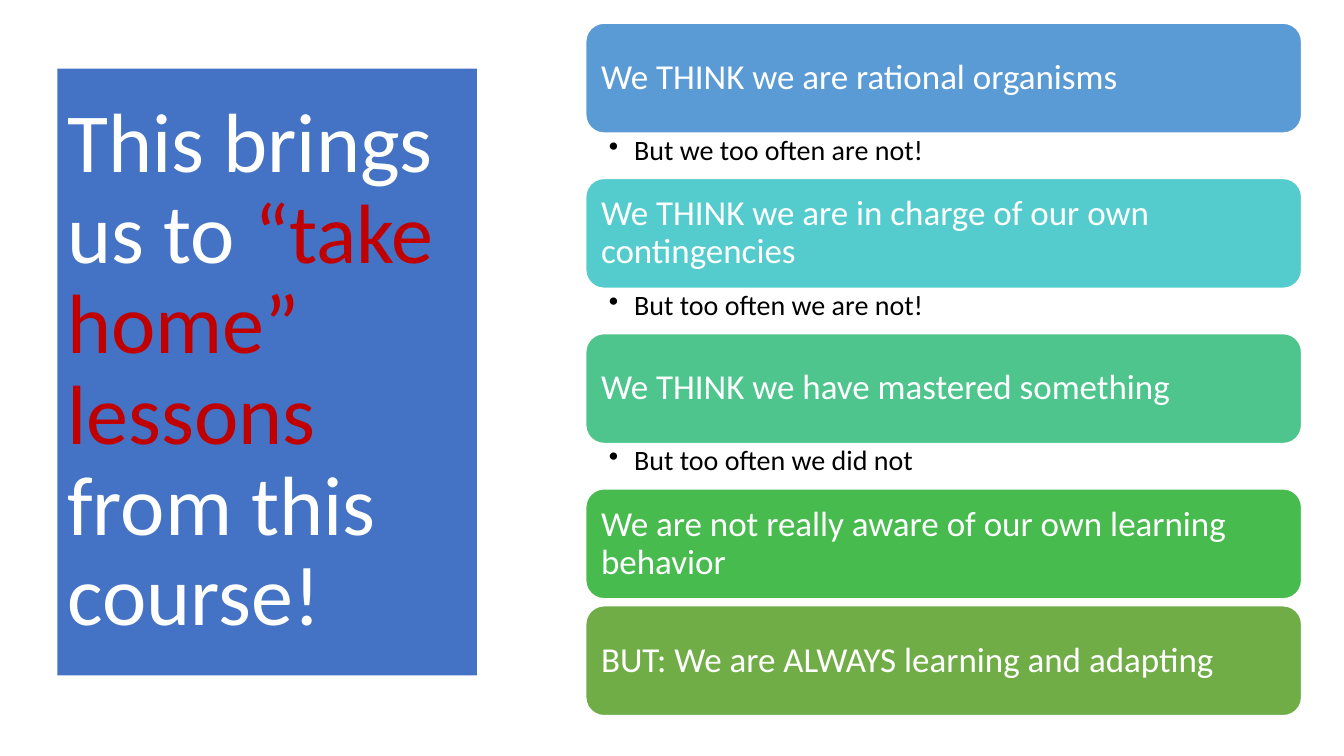
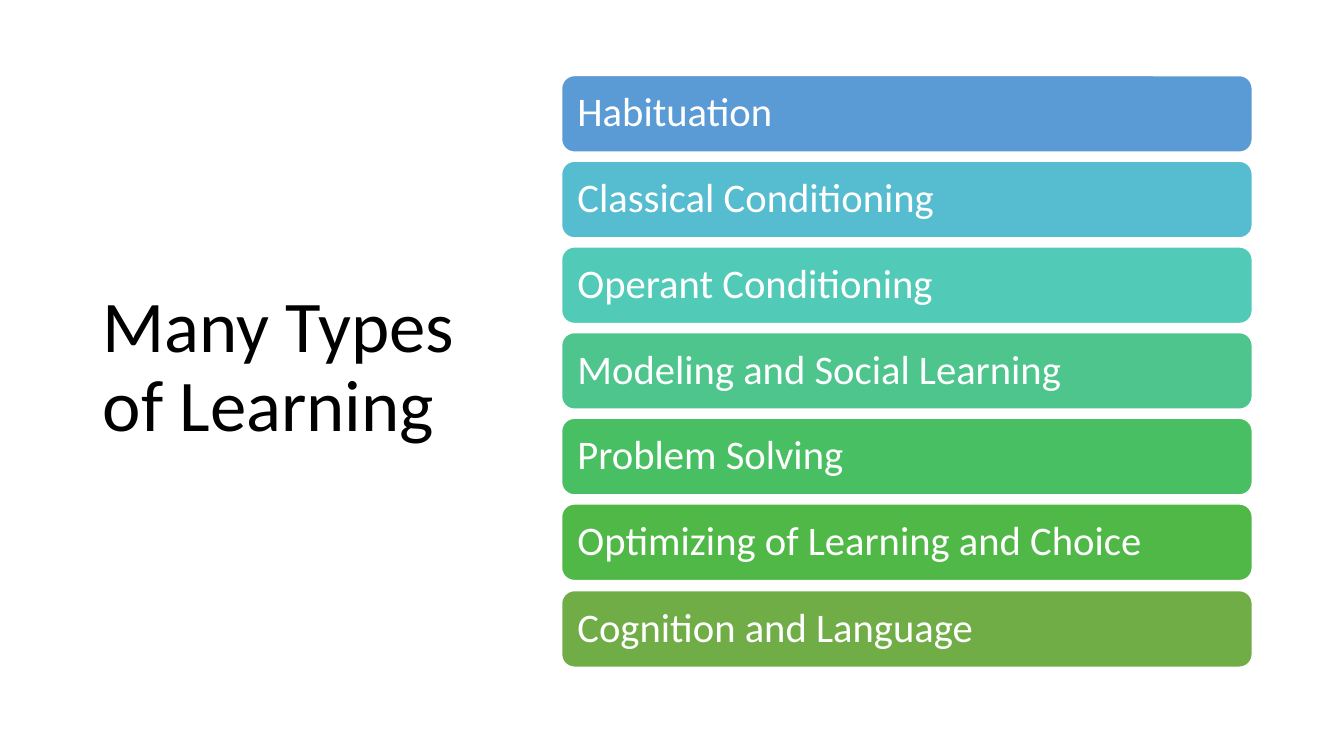
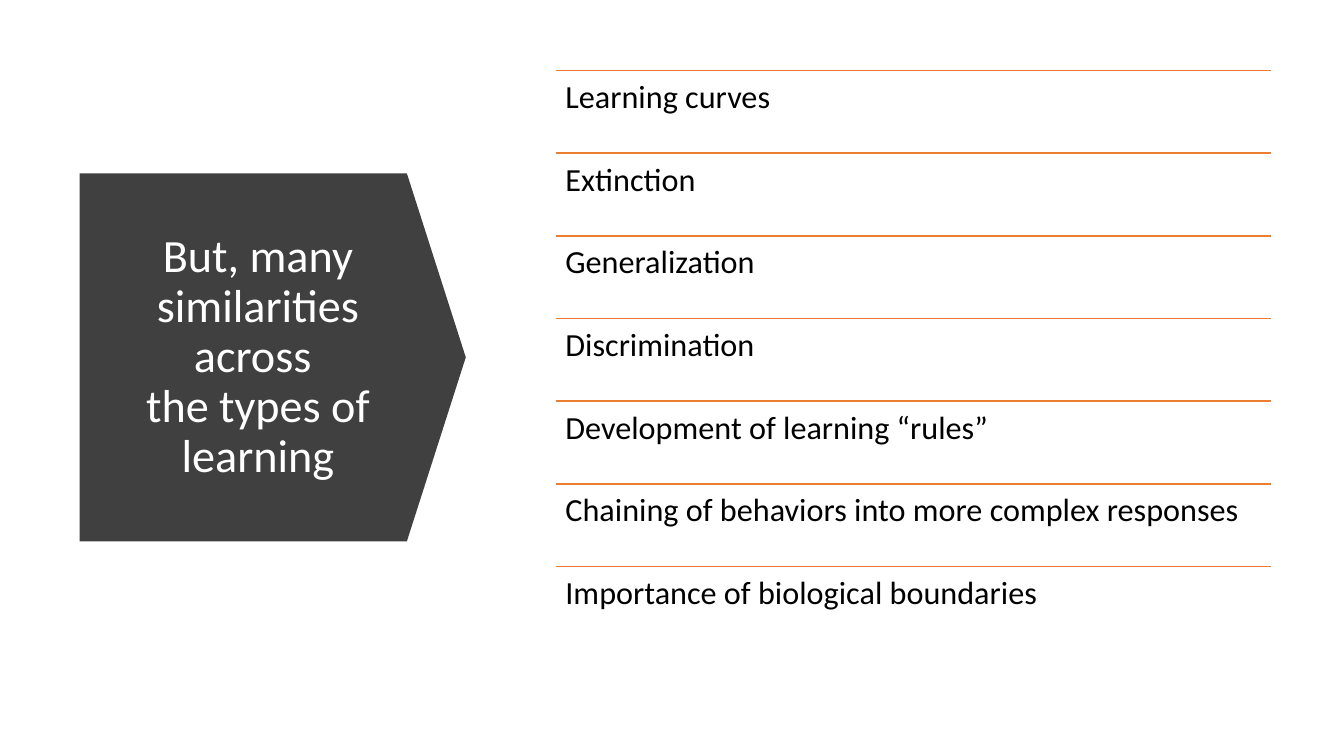
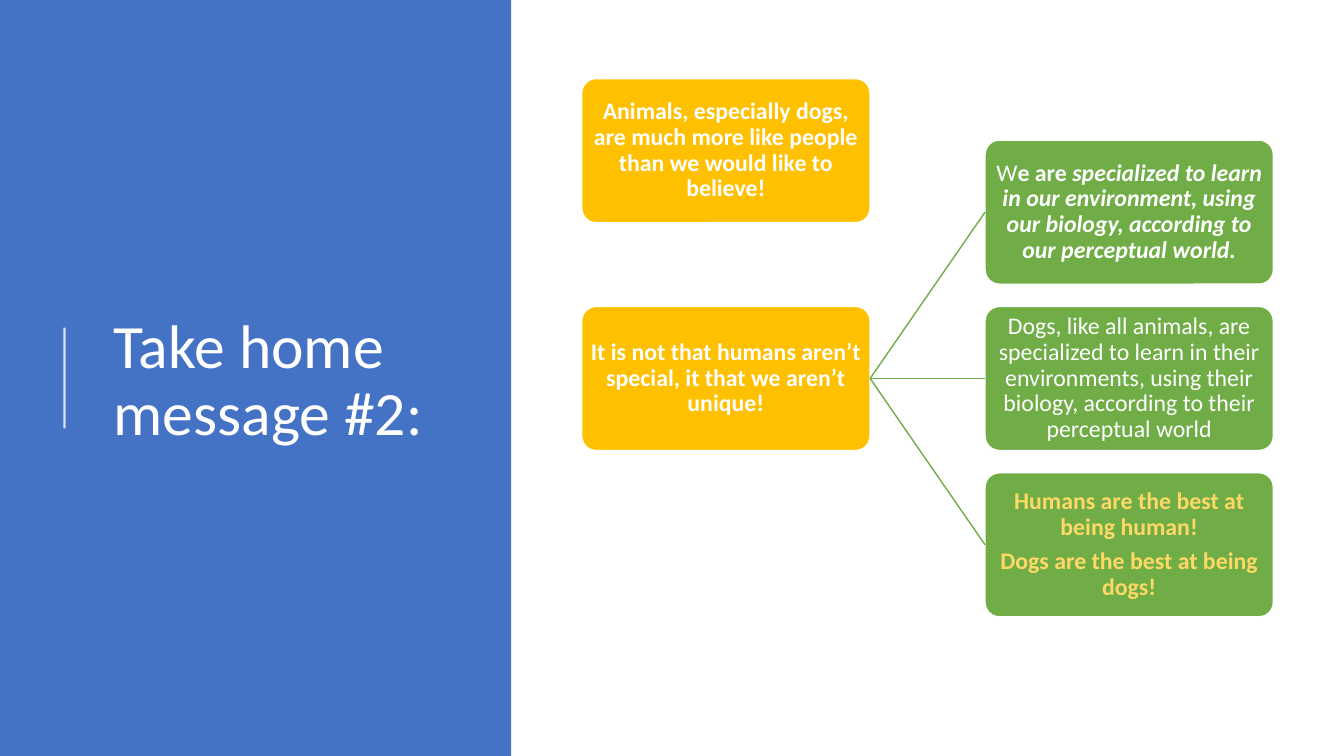
import pptx
import pptx.util
import pptx.dml.color
import pptx.enum.shapes
import pptx.enum.text
import pptx.oxml
import pptx.oxml.ns
from lxml import etree

SHAPE = pptx.enum.shapes.MSO_SHAPE
ALIGN = pptx.enum.text.PP_ALIGN
ANCHOR = pptx.enum.text.MSO_ANCHOR

# Shared style
PX = 9144  # 100 px to the inch
FONT = "Calibri"
WHITE, BLACK = "FFFFFF", "000000"
BLUE, RED, ORANGE, GOLD = "4472C4", "C00000", "ED7D31", "FFC000"
GREEN, PALE_GOLD, CHARCOAL = "70AD47", "FFD966", "404040"
TITLE_INSETS = (10, 5, 10, 5)


def px(n):
    return pptx.util.Emu(n * PX)


def rgb(value):
    return pptx.dml.color.RGBColor.from_string(value)


def set_text(sp, paragraphs, size, color, insets=TITLE_INSETS,
             anchor=ANCHOR.MIDDLE, align=ALIGN.LEFT, bold=False, bullet=False):
    """Each paragraph is a string or a list of (text, run changes)."""
    tf = sp.text_frame
    tf.word_wrap = True
    tf.vertical_anchor = anchor
    tf.margin_left, tf.margin_top, tf.margin_right, tf.margin_bottom = map(px, insets)
    for i, content in enumerate(paragraphs):
        p = tf.paragraphs[0] if i == 0 else tf.add_paragraph()
        p.alignment = align
        p.line_spacing = 0.9
        if i:
            p.space_before = pptx.util.Pt(6)
        if bullet:
            pPr = p._p.get_or_add_pPr()
            pPr.set("marL", str(px(25)))
            pPr.set("indent", str(-px(25)))
            etree.SubElement(pPr, pptx.oxml.ns.qn("a:buChar")).set("char", "•")
        changes = [{}]
        if isinstance(content, str):
            p.text = content
            changes = [{}] * len(p.runs)
        else:
            changes = [change for _, change in content]
            for text, _ in content:
                p.add_run().text = text
        for r, change in zip(p.runs, changes):
            r.font.name = FONT
            r.font.size = pptx.util.Pt(size)
            r.font.bold = change.get("bold", bold)
            r.font.italic = change.get("italic", False)
            r.font.color.rgb = rgb(change.get("color", color))


def add_box(s, kind, box, fill, line=None, adjust=None):
    sp = s.shapes.add_shape(kind, *map(px, box))
    sp.shadow.inherit = False
    sp.fill.solid()
    sp.fill.fore_color.rgb = rgb(fill)
    if line:
        sp.line.color.rgb = rgb(line)
        sp.line.width = pptx.util.Pt(1)
    else:
        sp.line.fill.background()
    if adjust is not None:
        sp.adjustments[0] = adjust
    return sp


def add_text(s, box, paragraphs, size, color, **style):
    tb = s.shapes.add_textbox(*map(px, box))
    set_text(tb, paragraphs, size, color, **style)


def add_line(s, x1, y1, x2, y2, color, width=1, alpha=None):
    line = s.shapes.add_connector(pptx.enum.shapes.MSO_CONNECTOR.STRAIGHT,
                                  *map(px, (x1, y1, x2, y2)))
    line.line.color.rgb = rgb(color)
    line.line.width = pptx.util.Pt(width)
    spPr = line._element.spPr
    etree.SubElement(spPr, pptx.oxml.ns.qn("a:effectLst"))
    if alpha:
        clr = next(spPr.iter(pptx.oxml.ns.qn("a:srgbClr")))
        etree.SubElement(clr, pptx.oxml.ns.qn("a:alpha")).set("val", str(alpha * 1000))
    return line


def add_bar(s, box, text, size, fill, inset):
    bar = add_box(s, SHAPE.ROUNDED_RECTANGLE, box, fill, WHITE)
    set_text(bar, [text], size, WHITE, (inset,) * 4)


def lesson_stack(s, box, lessons):
    """Bars, each followed by a bulleted remark or a small gap."""
    x, y, w, _ = box
    bar_h, remark_h, gap = 109, 45, 7
    for text, fill, remark in lessons:
        add_bar(s, (x, y, w, bar_h), text, 25, fill, 10)
        y += bar_h
        if remark:
            add_text(s, (x, y, w, remark_h), [remark], 20, BLACK,
                     insets=(23, 3, 19, 3), anchor=ANCHOR.TOP, bullet=True)
        y += remark_h if remark else gap


def bar_list(s, box, bars):
    x, y, w, h = box
    bar_h = 76
    for i, (text, fill) in enumerate(bars):
        top = y + (h - bar_h) * i // (len(bars) - 1)
        add_bar(s, (x, top, w, bar_h), text, 29, fill, 12)


def ruled_list(s, box, items):
    x, y, w, h = box
    row_h = h // len(items)
    for i, text in enumerate(items):
        top = y + h * i // len(items)
        add_line(s, x, top, x + w, top, ORANGE)
        add_text(s, (x, top, w, row_h), [text], 23, BLACK,
                 insets=(10,) * 4, anchor=ANCHOR.TOP)


def message_tree(s, box, roots, leaves):
    """Two root cards on the left; the last one branches to the leaves."""
    x, y, w, _ = box
    card_w, card_h = 286, 143
    root_step, leaf_top, leaf_step = 226, 61, 165

    def card(left, top, fill, paragraphs, color=WHITE, bold=False):
        sp = add_box(s, SHAPE.ROUNDED_RECTANGLE, (left, top, card_w, card_h),
                     fill, WHITE, 0.1)
        set_text(sp, paragraphs, 17, color, (1,) * 4, align=ALIGN.CENTER, bold=bold)
        return sp

    for i, text in enumerate(roots):
        root = card(x, y + i * root_step, GOLD, [text], bold=True)
    for i, (paragraphs, color, bold) in enumerate(leaves):
        leaf = card(x + w - card_w, y + leaf_top + i * leaf_step, GREEN,
                    paragraphs, color, bold)
        branch = add_line(s, 0, 0, 0, 0, GREEN)
        branch.begin_connect(root, 3)
        branch.end_connect(leaf, 1)


def main():
    prs = pptx.Presentation()
    prs.slide_width, prs.slide_height = px(1333), px(750)
    blank = prs.slide_layouts[6]

    # Slide 1: take home lessons
    s = prs.slides.add_slide(blank)
    panel = add_box(s, SHAPE.RECTANGLE, (57, 68, 416, 602), BLUE)
    set_text(panel, [[("This brings us to ", {}),
                      ("“take home” lessons ", {"color": RED}),
                      ("from this course!", {})]], 60, WHITE)
    lesson_stack(s, (581, 23, 710, 687), [
        ("We THINK we are rational organisms", "5B9BD5", "But we too often are not!"),
        ("We THINK we are in charge of our own contingencies", "54CCCD",
         "But too often we are not!"),
        ("We THINK we have mastered something", "4DC58D", "But too often we did not"),
        ("We are not really aware of our own learning behavior", "48BB4F", None),
        ("BUT: We are ALWAYS learning and adapting", GREEN, None),
    ])

    # Slide 2: types of learning
    s = prs.slides.add_slide(blank)
    add_text(s, (92, 61, 369, 609), ["Many Types of Learning"], 52, BLACK)
    bar_list(s, (557, 75, 685, 587), [
        ("Habituation", "5B9BD5"),
        ("Classical Conditioning", "56BCD0"),
        ("Operant Conditioning", "52CAB8"),
        ("Modeling and Social Learning", "4DC58D"),
        ("Problem Solving", "49BF64"),
        ("Optimizing of Learning and Choice", "50B846"),
        ("Cognition and Language", GREEN),
    ])

    # Slide 3: similarities
    s = prs.slides.add_slide(blank)
    arrow = add_box(s, SHAPE.PENTAGON, (79, 172, 383, 365), CHARCOAL, adjust=0.16)
    set_text(arrow, ["But, many similarities across \vthe types of learning"], 33,
             WHITE, (43, 5, 43, 5), align=ALIGN.CENTER)
    ruled_list(s, (551, 70, 710, 575), [
        "Learning curves",
        "Extinction",
        "Generalization",
        "Discrimination",
        "Development of learning “rules”",
        "Chaining of behaviors into more complex responses",
        "Importance of biological boundaries",
    ])

    # Slide 4: second message
    s = prs.slides.add_slide(blank)
    add_box(s, SHAPE.RECTANGLE, (0, 0, 507, 750), BLUE)
    add_text(s, (103, 78, 369, 602), ["Take home message #2:"], 44, WHITE)
    add_line(s, 64, 425, 64, 325, WHITE, 1.5, alpha=80)
    message_tree(s, (577, 78, 686, 533), [
        "Animals, especially dogs, are much more like people than we would like to believe!",
        "It is not that humans aren’t special, it that we aren’t unique!",
    ], [
        ([[("W", {"bold": False}), ("e are ", {}),
           ("specialized to learn in our environment, using our biology, "
            "according to our perceptual world.", {"italic": True})]], WHITE, True),
        (["Dogs, like all animals, are specialized to learn in their environments, "
          "using their biology, according to their perceptual world"], WHITE, False),
        (["Humans are the best at being human!", "Dogs are the best at being dogs!"],
         PALE_GOLD, True),
    ])

    prs.save("out.pptx")


if __name__ == "__main__":
    main()
